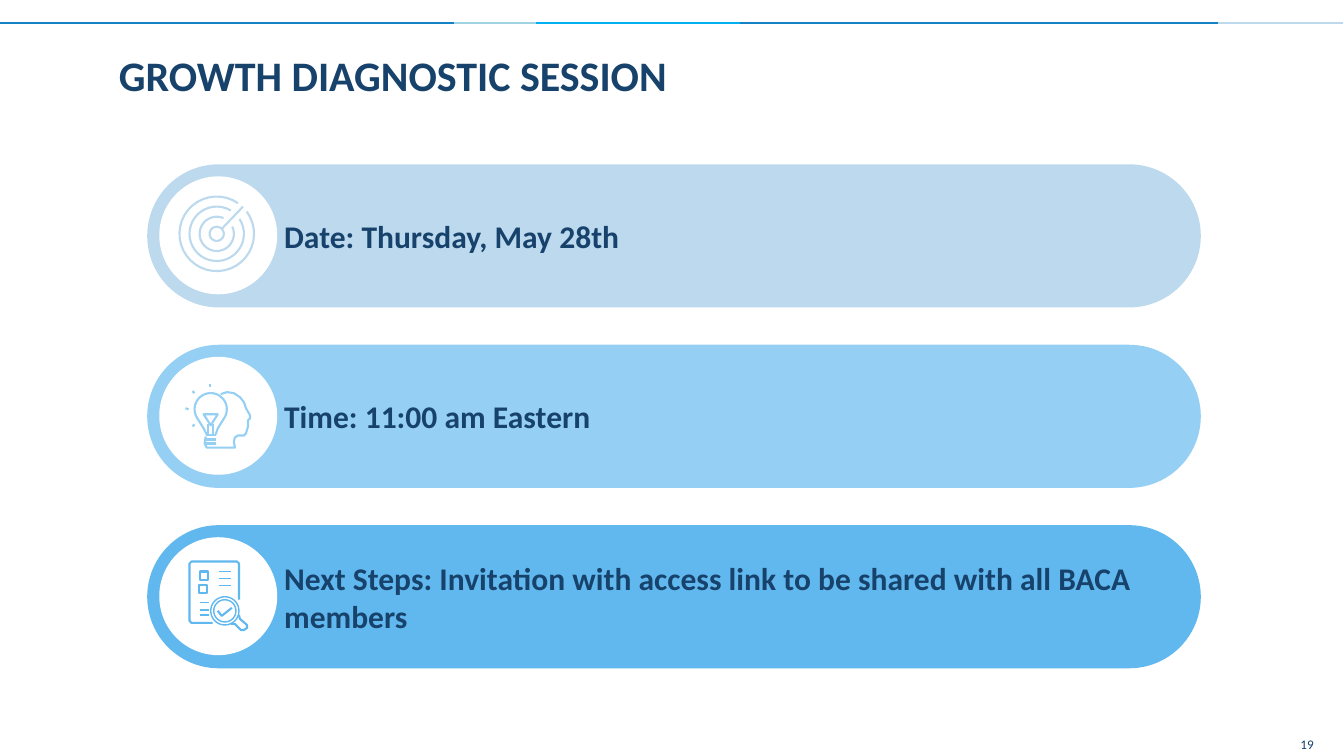
from math import asin, cos, degrees, radians, sin

from pptx import Presentation
from pptx.dml.color import RGBColor
from pptx.enum.shapes import MSO_CONNECTOR as CONNECTOR, MSO_SHAPE as SHAPE
from pptx.enum.text import MSO_ANCHOR as ANCHOR, PP_ALIGN as ALIGN
from pptx.oxml.ns import qn
from pptx.util import Emu, Pt
from lxml.etree import SubElement

EMU_PER_PX = 9144
NAVY = "17426B"
BLUE = "1582C5"
PALE = "BCD9EE"
SKY = "95D0F4"
AZURE = "61B8EE"
WHITE = "FFFFFF"


def px(length):
    return Emu(round(length * EMU_PER_PX))


def color(value):
    return RGBColor.from_string(value)


def arc(center_x, center_y, radius, start, end, steps=36):
    angles = [radians(start + (end - start) * i / steps) for i in range(steps + 1)]
    return [(center_x + radius * cos(a), center_y - radius * sin(a)) for a in angles]


class SlideBuilder:
    font_name = "Calibri"
    text_color = NAVY

    def __init__(self, slide):
        self.slide = slide

    def set_text(self, shape, text, size, bold=True, align=ALIGN.LEFT, left_inset=0, wrap=True):
        frame = shape.text_frame
        frame.word_wrap = wrap
        frame.vertical_anchor = ANCHOR.MIDDLE
        frame.margin_left = px(left_inset)
        frame.margin_top = frame.margin_bottom = frame.margin_right = 0
        paragraph = frame.paragraphs[0]
        paragraph.text = text
        paragraph.alignment = align
        font = paragraph.font
        font.name, font.size, font.bold = self.font_name, Pt(size), bold
        font.color.rgb = color(self.text_color)

    def text(self, box, text, size, **options):
        shape = self.slide.shapes.add_textbox(*map(px, box))
        self.set_text(shape, text, size, **options)

    def shape(self, kind, box, fill):
        shape = self.slide.shapes.add_shape(kind, *map(px, box))
        shape.shadow.inherit = False
        shape.fill.solid()
        shape.fill.fore_color.rgb = color(fill)
        shape.line.fill.background()
        return shape

    def line(self, start, end, stroke, width=1.5):
        connector = self.slide.shapes.add_connector(
            CONNECTOR.STRAIGHT, *map(px, (*start, *end)))
        connector.line.color.rgb = color(stroke)
        connector.line.width = Pt(width)
        SubElement(connector._element.spPr, qn("a:effectLst"))

    def outline(self, points, stroke, close=False, width=1.5):
        points = [(px(x), px(y)) for x, y in points]
        builder = self.slide.shapes.build_freeform(*points[0], scale=1.0)
        builder.add_line_segments(points[1:], close=close)
        shape = builder.convert_to_shape()
        shape.shadow.inherit = False
        shape.fill.background()
        shape.line.color.rgb = color(stroke)
        shape.line.width = Pt(width)

    def ring(self, center_x, center_y, radius, stroke, width=1.5):
        self.outline(arc(center_x, center_y, radius, 0, 360), stroke, True, width)

    def target_icon(self, stroke):
        for radius in (37, 27, 17):
            gap = degrees(asin(6 / radius))
            self.outline(arc(215, 232, radius, 46 + gap, 406 - gap), stroke)
        self.ring(215, 232, 7, stroke)
        self.line((220, 227), (241, 205), stroke)

    def idea_icon(self, stroke):
        bulb = [(205, 431), (202, 425), *arc(209, 406, 16, 210, -30), (216, 425), (214, 431)]
        head = [(219, 391), (225, 389), (232, 390), (238, 394), (242, 399), (244, 405),
                (248, 412), (248, 415), (246, 417), (246, 423), (244, 430), (242, 432),
                (236, 432), (233, 434), (232, 438), (233, 444), (205, 444), (203, 440),
                (204, 433)]
        self.outline(bulb, stroke)
        self.outline(head, stroke)
        self.outline([(202, 411), (216, 411), (209, 422)], stroke, close=True)
        for x in (206, 211):
            self.line((x, 421), (x, 431), stroke)
        for y in (432, 436, 440):
            self.line((204, y), (214, y), stroke)
        for start, end in (((208, 381), (208, 384)), ((184, 405), (187, 406)),
                           ((191, 388), (193, 390)), ((191, 423), (193, 421))):
            self.line(start, end, stroke)

    def checklist_icon(self, stroke):
        page = [(211, 618), (190, 618), (188, 616), (188, 559), (190, 557), (235, 557),
                (237, 559), (237, 595)]
        handle = [(237, 610), (238, 614), (245, 620), (245, 623), (242, 625), (239, 625),
                  (233, 619), (229, 619)]
        self.outline(page, stroke)
        for x, y in ((198, 567), (197, 580)):
            box = [(x, y), (x + 8, y), (x + 8, y + 8), (x, y + 8)]
            self.outline(box, stroke, close=True)
        for y in (567, 574, 581):
            self.line((217, y), (229, y), stroke, 0.5)
        for y in (598, 605, 610):
            self.line((198, y), (207, y), stroke, 1)
        self.ring(223, 606, 14, stroke, 1)
        self.ring(223, 606, 11, stroke, 1)
        self.outline(handle, stroke)
        self.outline([(216, 606), (220, 611), (230, 603)], stroke)


def main():
    presentation = Presentation()
    presentation.slide_width, presentation.slide_height = px(1333), px(750)
    builder = SlideBuilder(presentation.slides.add_slide(presentation.slide_layouts[6]))

    builder.text((1288, 730, 15, 16), "19", 9.4, bold=False, align=ALIGN.RIGHT, wrap=False)
    for left, right, stroke in ((1201, 1332, PALE), (710, 1208, BLUE), (0, 453, BLUE),
                                (523, 734, "00B0F0"), (450, 532, "9FD3E1")):
        builder.line((left, 23), (right, 23), stroke)
    builder.text((118, 12, 1097, 125), "GROWTH DIAGNOSTIC SESSION", 30)

    bands = (
        ("Date: Thursday, May 28th", PALE, builder.target_icon),
        ("Time: 11:00 am Eastern", SKY, builder.idea_icon),
        ("Next Steps: Invitation with access link to be shared with all BACA members",
         AZURE, builder.checklist_icon),
    )
    for index, (text, fill, draw_icon) in enumerate(bands):
        top = 163 + 179 * index
        band = builder.shape(SHAPE.ROUNDED_RECTANGLE, (146, top, 1045, 142), fill)
        band.adjustments[0] = 0.5
        builder.set_text(band, text, 22.5, left_inset=115)
        builder.shape(SHAPE.OVAL, (158, top + 12, 117, 117), WHITE)
        draw_icon(fill)

    presentation.save("out.pptx")


if __name__ == "__main__":
    main()
